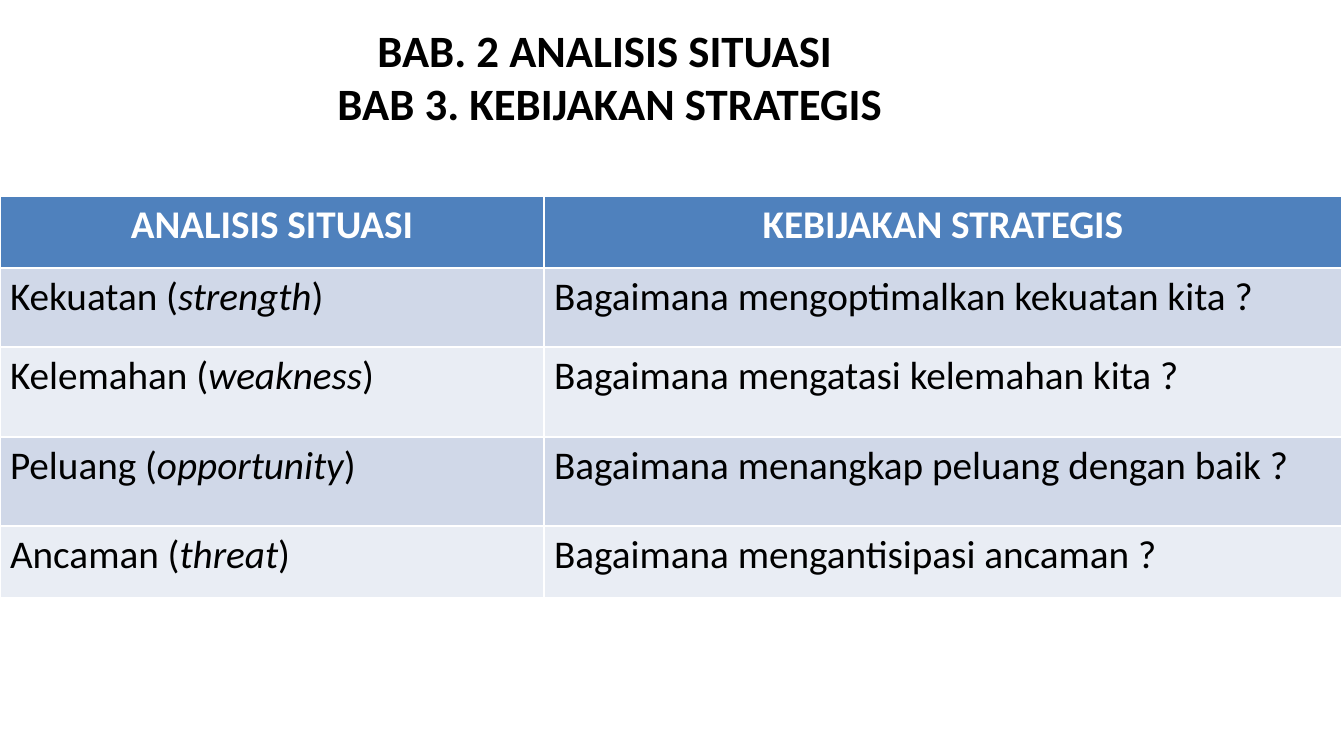
from pptx import Presentation
from pptx.dml.color import RGBColor
from pptx.enum.text import MSO_ANCHOR, PP_ALIGN
from pptx.util import Emu, Pt

CENTER, LEFT = PP_ALIGN.CENTER, PP_ALIGN.LEFT
MIDDLE = MSO_ANCHOR.MIDDLE

BLACK = RGBColor(0x00, 0x00, 0x00)
WHITE = RGBColor(0xFF, 0xFF, 0xFF)
HEADER_BLUE = RGBColor(0x4F, 0x81, 0xBD)
BANDS = (RGBColor(0xD0, 0xD8, 0xE8), RGBColor(0xE9, 0xED, 0xF4))

FONT = "Calibri"
SLIDE_SIZE = (1344, 756)
TITLE_BOX = (0, 13, 1210, 126)
TABLE_BOX = (0, 196, 1342, 402)
FIRST_COLUMN = 544
ROW_HEIGHTS = (72, 79, 90, 89, 72)

TITLE_LINES = ("BAB. 2 ANALISIS SITUASI", " BAB 3. KEBIJAKAN STRATEGIS")
HEADINGS = ("ANALISIS SITUASI", "KEBIJAKAN STRATEGIS")
SWOT = (
    ("Kekuatan", "strength", "Bagaimana mengoptimalkan kekuatan kita ?"),
    ("Kelemahan", "weakness", "Bagaimana mengatasi kelemahan kita ?"),
    ("Peluang", "opportunity", "Bagaimana menangkap peluang dengan baik ?"),
    ("Ancaman", "threat", "Bagaimana mengantisipasi ancaman ?"),
)


def px(length):
    return Emu(round(length * 914400 / 100.8))


def add_run(paragraph, text, size, color, bold=False, italic=False):
    run = paragraph.add_run()
    run.text = text
    font = run.font
    font.name, font.size = FONT, Pt(size)
    font.bold, font.italic = bold, italic
    font.color.rgb = color


def add_title(slide, box):
    frame = slide.shapes.add_textbox(*map(px, box)).text_frame
    frame.word_wrap = True
    frame.vertical_anchor = MIDDLE
    paragraph = frame.paragraphs[0]
    paragraph.alignment = CENTER
    for index, line in enumerate(TITLE_LINES):
        if index:
            paragraph.add_line_break()
        add_run(paragraph, line, 32, BLACK, bold=True)


def fill_cell(cell, fill, alignment):
    """Colour the cell and return its aligned paragraph."""
    cell.fill.solid()
    cell.fill.fore_color.rgb = fill
    paragraph = cell.text_frame.paragraphs[0]
    paragraph.alignment = alignment
    return paragraph


def add_strategy_table(slide, box):
    table = slide.shapes.add_table(len(SWOT) + 1, len(HEADINGS), *map(px, box)).table
    for column, width in zip(table.columns, (FIRST_COLUMN, box[2] - FIRST_COLUMN)):
        column.width = px(width)
    for row, height in zip(table.rows, ROW_HEIGHTS):
        row.height = px(height)

    for column, heading in enumerate(HEADINGS):
        paragraph = fill_cell(table.cell(0, column), HEADER_BLUE, CENTER)
        add_run(paragraph, heading, 28, WHITE, bold=True)

    for row, (factor, english, question) in enumerate(SWOT, start=1):
        band = BANDS[(row - 1) % len(BANDS)]
        situation = fill_cell(table.cell(row, 0), band, LEFT)
        add_run(situation, f"{factor} (", 28, BLACK)
        add_run(situation, english, 28, BLACK, italic=True)
        add_run(situation, ")", 28, BLACK)
        policy = fill_cell(table.cell(row, 1), band, LEFT)
        add_run(policy, question, 28, BLACK)


def main():
    presentation = Presentation()
    presentation.slide_width, presentation.slide_height = map(px, SLIDE_SIZE)
    slide = presentation.slides.add_slide(presentation.slide_layouts[6])
    add_title(slide, TITLE_BOX)
    add_strategy_table(slide, TABLE_BOX)
    presentation.save("out.pptx")


if __name__ == "__main__":
    main()
